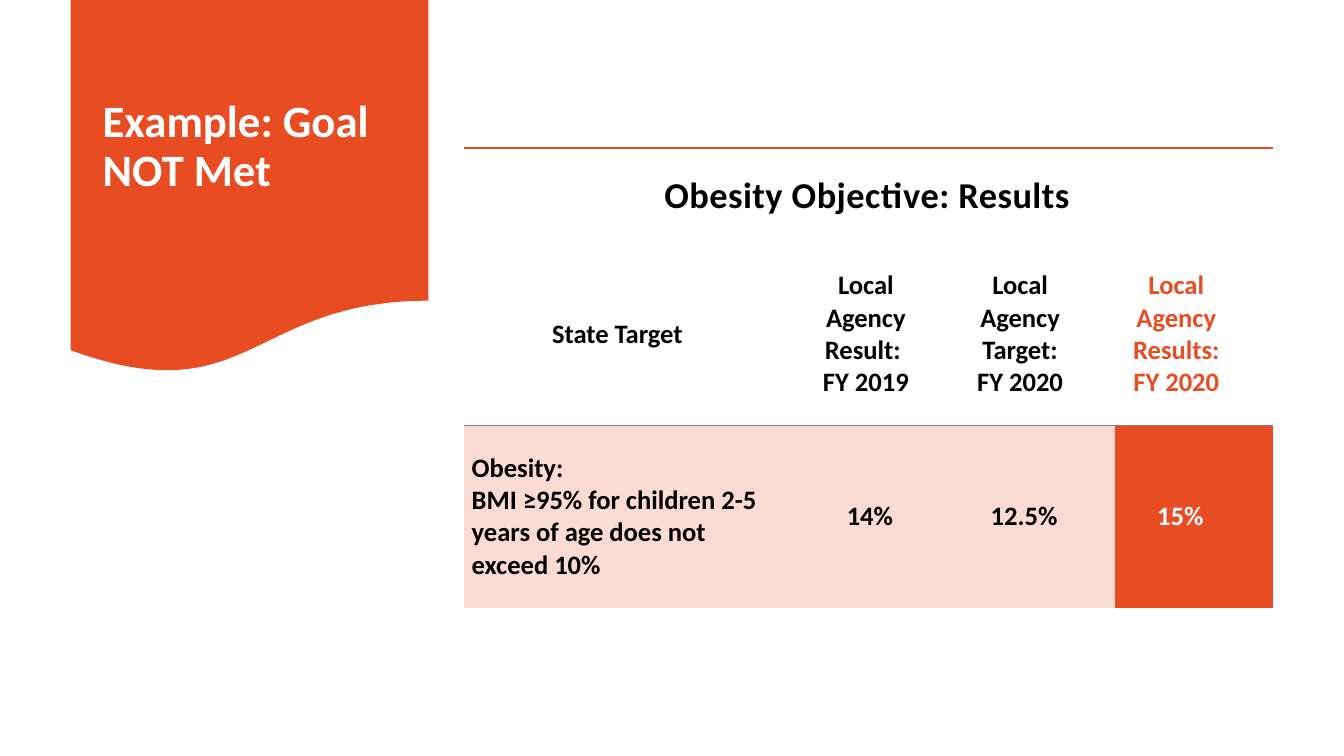
import dataclasses

import lxml.etree
import pptx
import pptx.dml.color
import pptx.enum.shapes
import pptx.enum.text
import pptx.oxml
import pptx.oxml.ns
import pptx.util

Pt = pptx.util.Pt
ALIGN = pptx.enum.text.PP_ALIGN
MIDDLE = pptx.enum.text.MSO_ANCHOR.MIDDLE
PLAIN_TABLE_STYLE = "{2D5ABB26-0587-4C30-8999-92F81FD0307C}"


@dataclasses.dataclass(frozen=True)
class Theme:
    font: str = "Calibri"
    accent: str = "E84C22"
    tint: str = "FADBD3"
    rule: str = "7F7F7F"
    dark: str = "000000"
    light: str = "FFFFFF"
    title_size: float = 32
    heading_size: float = 26
    body_size: float = 19


THEME = Theme()
HEADERS = [
    ["State Target"],
    ["Local Agency Result: ", "FY 2019"],
    ["Local Agency Target:", "FY 2020"],
    ["Local Agency Results:", "FY 2020"],
]
RESULTS = [
    ["Obesity:", "BMI ≥95% for children 2-5 years of age does not exceed 10%"],
    ["14%"],
    ["12.5%"],
    ["15%"],
]


def rgb(color):
    return pptx.dml.color.RGBColor.from_string(color)


def apply_format(target, values):
    for name, value in values.items():
        setattr(target, name, value)


def write_lines(frame, lines, size, color, align, line_spacing=1.0):
    for index, line in enumerate(lines):
        para = frame.paragraphs[0] if index == 0 else frame.add_paragraph()
        apply_format(para, {"alignment": align, "line_spacing": line_spacing})
        span = para.add_run()
        span.text = line
        apply_format(span.font, {"name": THEME.font, "size": Pt(size), "bold": True})
        span.font.color.rgb = rgb(color)


def write_cell(cell, lines, size, color, align, margins, fill=None):
    sides = ("margin_left", "margin_top", "margin_right", "margin_bottom")
    apply_format(cell, dict(zip(sides, map(Pt, margins))))
    cell.vertical_anchor = MIDDLE
    if fill:
        cell.fill.solid()
        cell.fill.fore_color.rgb = rgb(fill)
    else:
        cell.fill.background()
    write_lines(cell.text_frame, lines, size, color, align)


def add_top_border(cell, color, width):
    border = pptx.oxml.parse_xml(
        f'<a:lnT {pptx.oxml.ns.nsdecls("a")} w="{int(Pt(width))}">'
        f'<a:solidFill><a:srgbClr val="{color}"/></a:solidFill></a:lnT>'
    )
    cell._tc.get_or_add_tcPr().insert(0, border)


def add_title_banner(page, left, top, width, height):
    banner = page.shapes.add_shape(
        pptx.enum.shapes.MSO_SHAPE.FLOWCHART_DOCUMENT,
        Pt(left), Pt(top), Pt(width), Pt(height),
    )
    banner.shadow.inherit = False
    banner.fill.solid()
    banner.fill.fore_color.rgb = rgb(THEME.accent)
    banner.line.fill.background()
    title = page.shapes.add_textbox(
        Pt(left + 15.84), Pt(top + 12), Pt(width - 31.68), Pt(186.48)
    )
    apply_format(title.text_frame, {"word_wrap": True, "vertical_anchor": MIDDLE})
    write_lines(title.text_frame, ["Example: Goal NOT Met"], THEME.title_size,
                THEME.light, ALIGN.LEFT, 0.9)


def add_results_table(page, left, top, column_widths, row_heights):
    frame = page.shapes.add_table(
        len(row_heights), len(column_widths), Pt(left), Pt(top),
        Pt(sum(column_widths)), Pt(sum(row_heights)),
    )
    table = frame.table
    apply_format(table, {"first_row": False, "horz_banding": False})
    table._tbl.tblPr.find(pptx.oxml.ns.qn("a:tableStyleId")).text = PLAIN_TABLE_STYLE
    for column, width in zip(table.columns, column_widths):
        column.width = Pt(width)
    for row, height in zip(table.rows, row_heights):
        row.height = Pt(height)

    heading = table.cell(0, 0)
    last = len(column_widths) - 1
    heading.merge(table.cell(0, last))
    write_cell(heading, ["Obesity Objective: Results"], THEME.heading_size,
               THEME.dark, ALIGN.CENTER, (0, 17.28, 1.44, 17.28))
    heading.text_frame.paragraphs[0].runs[0].font._element.set("spc", "30")

    for index, (header, result) in enumerate(zip(HEADERS, RESULTS)):
        is_latest = index == last
        write_cell(table.cell(1, index), header, THEME.body_size,
                   THEME.accent if is_latest else THEME.dark, ALIGN.CENTER,
                   (0, 17.28, 25.2, 17.28))
        write_cell(table.cell(2, index), result, THEME.body_size,
                   THEME.light if is_latest else THEME.dark,
                   ALIGN.LEFT if index == 0 else ALIGN.CENTER,
                   (5.76, 17.28, 25.2, 17.28),
                   THEME.accent if is_latest else THEME.tint)
        add_top_border(table.cell(0, index), THEME.accent, 1.5)
        add_top_border(table.cell(2, index), THEME.rule, 0.75)


def main():
    deck = pptx.Presentation()
    apply_format(deck, {"slide_width": Pt(960), "slide_height": Pt(540)})
    page = deck.slides.add_slide(deck.slide_layouts[6])
    add_title_banner(page, 50.4, 0, 255.6, 267.84)
    add_results_table(page, 331.2, 105.84, [244.8, 110.16, 110.16, 113.04],
                      [67.68, 130.32, 130.32])
    deck.save("out.pptx")


if __name__ == "__main__":
    main()
